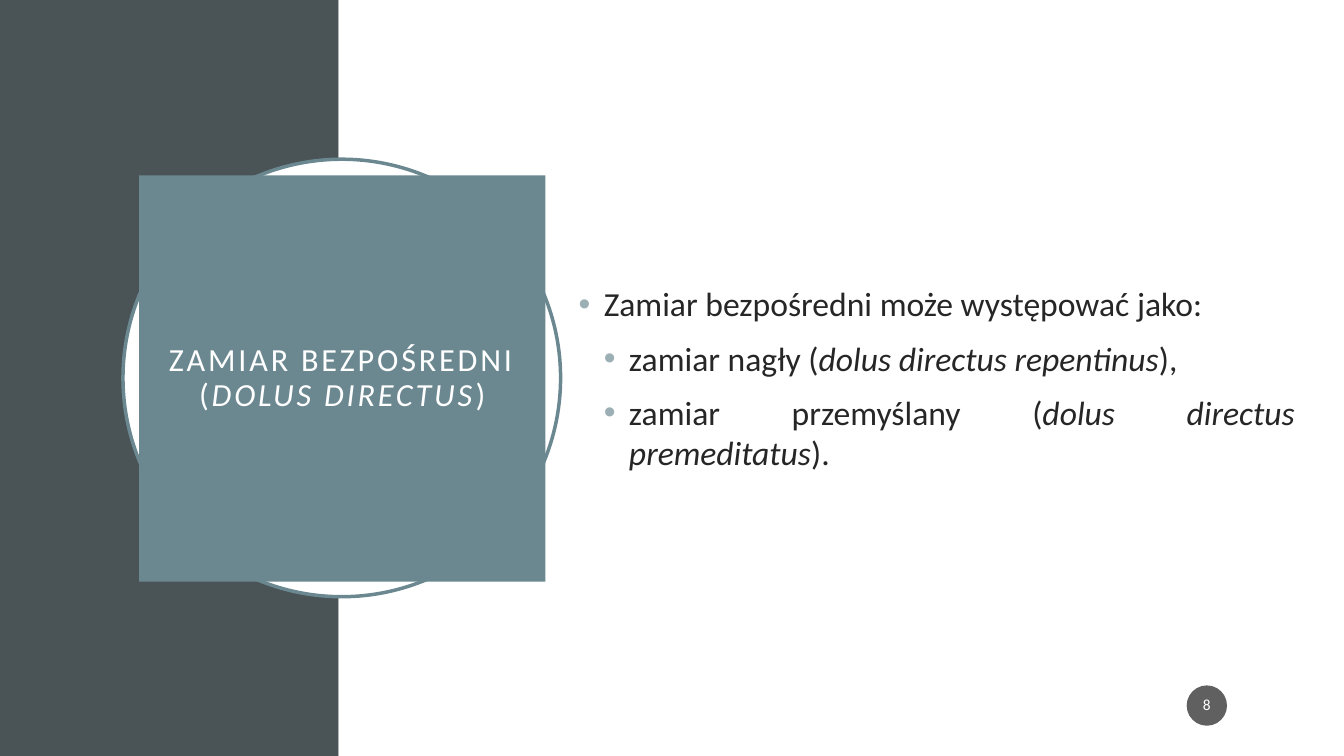
import pptx
import pptx.dml.color
import pptx.enum.shapes
import pptx.enum.text
import pptx.oxml
import pptx.oxml.ns
import pptx.util
from lxml import etree

Inches = pptx.util.Inches
Pt = pptx.util.Pt
RGBColor = pptx.dml.color.RGBColor
SHAPE = pptx.enum.shapes.MSO_SHAPE
ALIGN = pptx.enum.text.PP_ALIGN
qn = pptx.oxml.ns.qn

WHITE = RGBColor(0xFF, 0xFF, 0xFF)
SLATE = RGBColor(0x4A, 0x53, 0x56)
TEAL = RGBColor(0x6B, 0x88, 0x91)
BULLET = RGBColor(0x9B, 0xAF, 0xB5)
INK = RGBColor(0x26, 0x26, 0x26)
BADGE = RGBColor(0x1D, 0x1D, 0x1D)


class SlideBuilder:
    font = "Calibri"

    def __init__(self, slide):
        self.slide = slide

    def shape(self, kind, box, fill, line=None, alpha=None):
        shape = self.slide.shapes.add_shape(kind, *map(Inches, box))
        shape.shadow.inherit = False
        shape.fill.solid()
        shape.fill.fore_color.rgb = fill
        if alpha is not None:
            color = shape.fill._xPr.find(qn("a:solidFill"))[0]
            etree.SubElement(color, qn("a:alpha"), val=str(alpha * 1000))
        if line is None:
            shape.line.fill.background()
        else:
            shape.line.color.rgb = line
            shape.line.width = Pt(2.5)
        return shape

    def frame(self, shape, side, top):
        frame = shape.text_frame
        frame.word_wrap = True
        frame.vertical_anchor = pptx.enum.text.MSO_ANCHOR.MIDDLE
        frame.margin_left = frame.margin_right = Inches(side)
        frame.margin_top = frame.margin_bottom = Inches(top)
        return frame

    def add_runs(self, paragraph, parts, size, color, align, spacing=None):
        """Every second part is italic."""
        paragraph.alignment = align
        for index, part in enumerate(parts):
            run = paragraph.add_run()
            run.text = part
            run.font.name = self.font
            run.font.size = Pt(size)
            run.font.color.rgb = color
            run.font.italic = index % 2 == 1
            if spacing:
                run.font._element.set("spc", str(spacing * 100))

    def label(self, shape, parts, size, side, top, spacing=None):
        paragraph = self.frame(shape, side, top).paragraphs[0]
        paragraph.line_spacing = 0.9
        self.add_runs(paragraph, parts, size, WHITE, ALIGN.CENTER, spacing)

    def bullets(self, box, items):
        frame = self.frame(self.slide.shapes.add_textbox(*map(Inches, box)), 0.1, 0.05)
        for index, (level, parts) in enumerate(items):
            paragraph = frame.add_paragraph() if index else frame.paragraphs[0]
            paragraph.level = level
            paragraph.space_before = Pt(10)
            self.add_runs(paragraph, parts, 24, INK, ALIGN.JUSTIFY)
            props = paragraph._p.get_or_add_pPr()
            props.set("marL", str(Inches(0.25 * (level + 1))))
            props.set("indent", str(Inches(-0.25)))
            color = etree.SubElement(props, qn("a:buClr"))
            etree.SubElement(color, qn("a:srgbClr"), val=str(BULLET))
            etree.SubElement(props, qn("a:buFont"), typeface="Arial")
            etree.SubElement(props, qn("a:buChar"), char="•")


def main():
    deck = pptx.Presentation()
    deck.slide_width, deck.slide_height = Inches(13.33), Inches(7.5)
    builder = SlideBuilder(deck.slides.add_slide(deck.slide_layouts[6]))

    # Background halves
    builder.shape(SHAPE.RECTANGLE, (0, 0, 3.36, 7.5), SLATE)
    builder.shape(SHAPE.RECTANGLE, (3.36, 0, 9.97, 7.5), WHITE)

    # Title on its ring
    builder.shape(SHAPE.OVAL, (1.22, 1.58, 4.34, 4.34), WHITE, line=TEAL)
    title = builder.shape(SHAPE.RECTANGLE, (1.38, 1.74, 4.03, 4.03), TEAL)
    builder.label(title, ["ZAMIAR BEZPOŚREDNI (", "DOLUS DIRECTUS", ")"], 23, 0.2, 0.2, spacing=2)

    # Kinds of direct intent
    builder.bullets((5.64, 1.01, 7.3, 5.48), [
        (0, ["Zamiar bezpośredni może występować jako:"]),
        (1, ["zamiar nagły (", "dolus directus repentinus", "),"]),
        (1, ["zamiar przemyślany (", "dolus directus premeditatus", ")."]),
    ])

    # Page number
    badge = builder.shape(SHAPE.OVAL, (11.77, 6.8, 0.4, 0.4), BADGE, alpha=70)
    builder.label(badge, ["8"], 11, 0.02, 0.05)

    deck.save("out.pptx")


if __name__ == "__main__":
    main()
